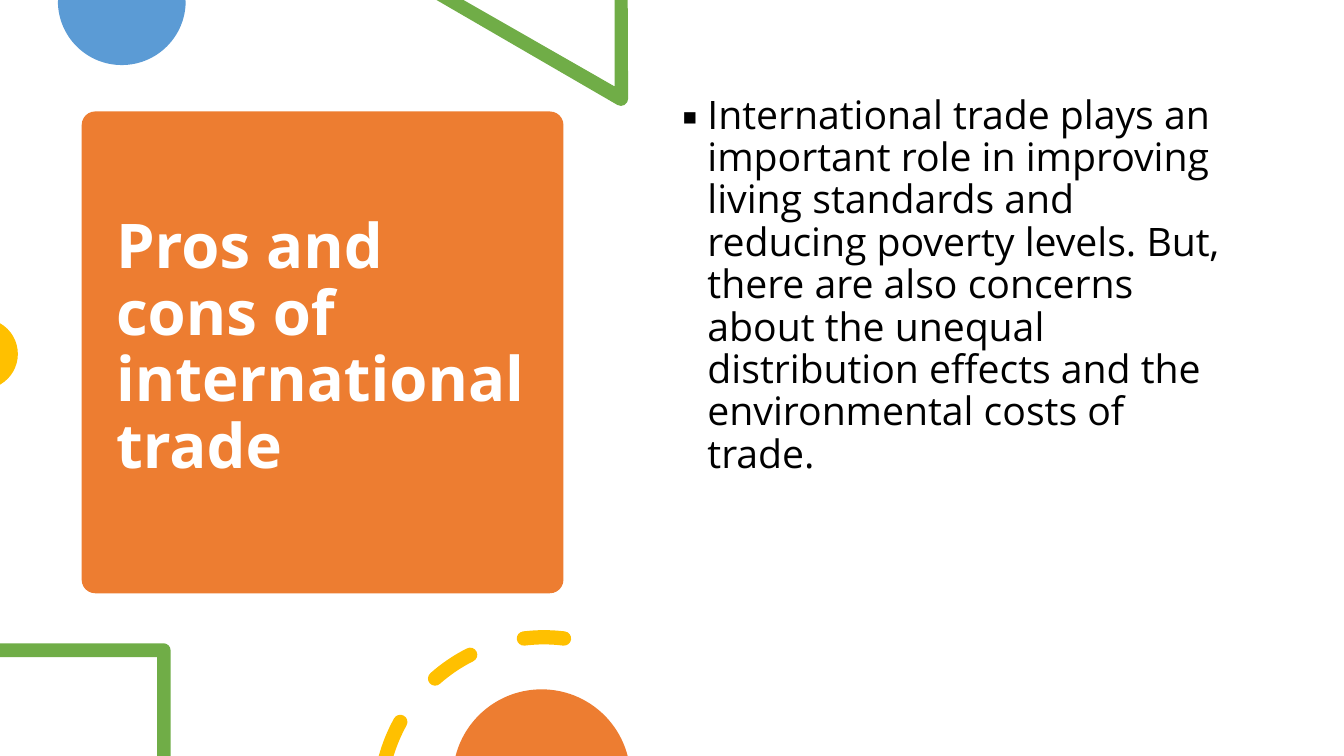
from math import ceil, cos, radians, sin, tan

from lxml.etree import SubElement
from pptx import Presentation
from pptx.dml.color import RGBColor
from pptx.enum.shapes import MSO_SHAPE as Preset
from pptx.enum.text import MSO_ANCHOR as Anchor, PP_ALIGN as Align
from pptx.oxml.ns import qn
from pptx.util import Cm, Pt

FONT = "Open Sans"
ORANGE, BLUE, GREEN, YELLOW = "ED7D31", "5B9BD5", "70AD47", "FFC000"
WHITE, BLACK = "FFFFFF", "000000"
WIDTH, HEIGHT = 33.87, 19.05
STROKE = 0.18
RING_X, RING_Y, RING_RADIUS = 13.71, 20.2, 4.14


def color(value):
    """Turn a hex string into a colour."""
    return RGBColor.from_string(value)


def paint(shape, fill):
    """Give a shape a plain fill without line or shadow."""
    shape.shadow.inherit = False
    shape.fill.solid()
    shape.fill.fore_color.rgb = color(fill)
    shape.line.fill.background()


def lines(*points):
    """Return straight segments, each holding one point."""
    return [[point] for point in points]


def arc(x, y, radius, start, end):
    """Return a first point and cubic curves along an arc, clockwise from the right."""
    def spot(angle, pull=0):
        return (x + radius * (cos(angle) - pull * sin(angle)),
                y + radius * (sin(angle) + pull * cos(angle)))

    parts = ceil(abs(end - start) / 90)
    step = radians(end - start) / parts
    pull = 4 / 3 * tan(step / 4)
    angles = [radians(start) + step * part for part in range(parts + 1)]
    return lines(spot(angles[0])) + [
        [spot(here, pull), spot(there, -pull), spot(there)]
        for here, there in zip(angles, angles[1:])]


def ring_arc(offset, start, end):
    """Return an arc of the dashed ring, shifted outwards by an offset."""
    return arc(RING_X, RING_Y, RING_RADIUS + offset, start, end)


def ring_cap(angle, turn):
    """Return the curves of a round dash end at an angle on the ring."""
    x = RING_X + RING_RADIUS * cos(radians(angle))
    y = RING_Y + RING_RADIUS * sin(radians(angle))
    return arc(x, y, STROKE, turn, turn + 180)[1:]


def dash(start, end):
    """Return the outline of a dash with two round ends."""
    return (ring_arc(STROKE, start, end) + ring_cap(end, end)
            + ring_arc(-STROKE, end, start)[1:] + ring_cap(start, start + 180))


def cut_dash(outer_start, inner_start, end):
    """Return the outline of a dash that the slide edge cuts off."""
    return (ring_arc(STROKE, outer_start, end) + ring_cap(end, end)
            + ring_arc(-STROKE, end, inner_start)[1:])


def bend(shape, contours):
    """Join the three points of each curved segment into one cubic curve."""
    nodes = iter(list(shape._element.iter(qn("a:moveTo"), qn("a:lnTo"))))
    for segment in (segment for contour in contours for segment in contour):
        first, *others = [next(nodes) for _ in segment]
        if others:
            first.tag = qn("a:cubicBezTo")
            for node in others:
                first.append(node[0])
                node.getparent().remove(node)


def add_outline(slide, fill, *contours):
    """Draw closed contours, given in centimetres, as one filled shape."""
    builder = None
    for contour in contours:
        first, *others = [(Cm(x), Cm(y)) for segment in contour for x, y in segment]
        if builder is None:
            builder = slide.shapes.build_freeform(*first)
        else:
            builder.move_to(*first)
        builder.add_line_segments(others, close=True)
    shape = builder.convert_to_shape()
    bend(shape, contours)
    paint(shape, fill)


def add_panel(slide, left, top, side, fill):
    """Draw the rounded square behind the title."""
    panel = slide.shapes.add_shape(
        Preset.ROUNDED_RECTANGLE, Cm(left), Cm(top), Cm(side), Cm(side))
    panel.adjustments[0] = 0.028
    paint(panel, fill)


def place(box, left, top, width, height):
    """Set the position and size of a box in centimetres."""
    box.left, box.top, box.width, box.height = map(Cm, (left, top, width, height))


def write(box, text, size, fill, bold=False, anchor=Anchor.TOP, before=0,
          bottom=0.13, bullet=None):
    """Write one formatted paragraph into a box."""
    frame = box.text_frame
    frame.word_wrap = True
    frame.vertical_anchor = anchor
    frame.margin_bottom = Cm(bottom)
    para = frame.paragraphs[0]
    para.alignment = Align.LEFT
    para.line_spacing = 0.9
    para.space_before = Pt(before)
    if bullet:
        properties = para._p.get_or_add_pPr()
        properties.set("marL", str(Cm(0.64)))
        properties.set("indent", str(-Cm(0.64)))
        SubElement(properties, qn("a:buFont"), typeface=FONT)
        SubElement(properties, qn("a:buChar"), char=bullet)
    span = para.add_run()
    span.text = text
    span.font.name = FONT
    span.font.size = Pt(size)
    span.font.bold = bold
    span.font.color.rgb = color(fill)


def add_decorations(slide):
    """Draw the coloured outlines along the slide edges."""
    add_outline(slide, BLUE, lines((4.67, 0), (1.47, 0)) + arc(3.07, 0.03, 1.61, 180, 0))
    add_outline(slide, GREEN,
                lines((15.82, 0), (15.49, 0), (15.49, 2.18), (11.68, 0), (11, 0))
                + arc(15.65, 2.49, STROKE, 120, 0))
    add_outline(slide, YELLOW, arc(-0.44, 8.92, 0.89, -60, 60))
    add_outline(slide, GREEN,
                lines((0, 16.21), (0, 16.56), (3.96, 16.56), (3.96, HEIGHT), (4.3, HEIGHT))
                + arc(4.12, 16.39, STROKE, 0, -90))
    add_outline(slide, YELLOW, cut_dash(195.4, 196.9, 209),
                dash(228.5, 243.3), dash(263, 277))
    add_outline(slide, ORANGE, arc(13.65, 19.61, 2.24, 194.5, 345.5))


def main():
    """Build the slide and save the deck."""
    deck = Presentation()
    deck.slide_width, deck.slide_height = Cm(WIDTH), Cm(HEIGHT)
    page = deck.slides.add_slide(deck.slide_layouts[5])
    add_panel(page, 2.06, 2.81, 12.14, ORANGE)

    title = page.shapes.title
    page.shapes._spTree.append(title._element)
    place(title, 2.67, 3.1, 10.95, 11.58)
    write(title, "Pros and cons of international trade", 44, WHITE,
          bold=True, anchor=Anchor.MIDDLE, bottom=0.33)
    add_decorations(page)

    body = page.shapes.add_textbox(0, 0, 0, 0)
    place(body, 16.94, 2.28, 14.6, 13.59)
    write(body, "International trade plays an important role in improving living "
          "standards and reducing poverty levels. But, there are also concerns about "
          "the unequal distribution effects and the environmental costs of trade.",
          28, BLACK, before=10, bullet="▪")
    deck.save("out.pptx")


if __name__ == "__main__":
    main()
